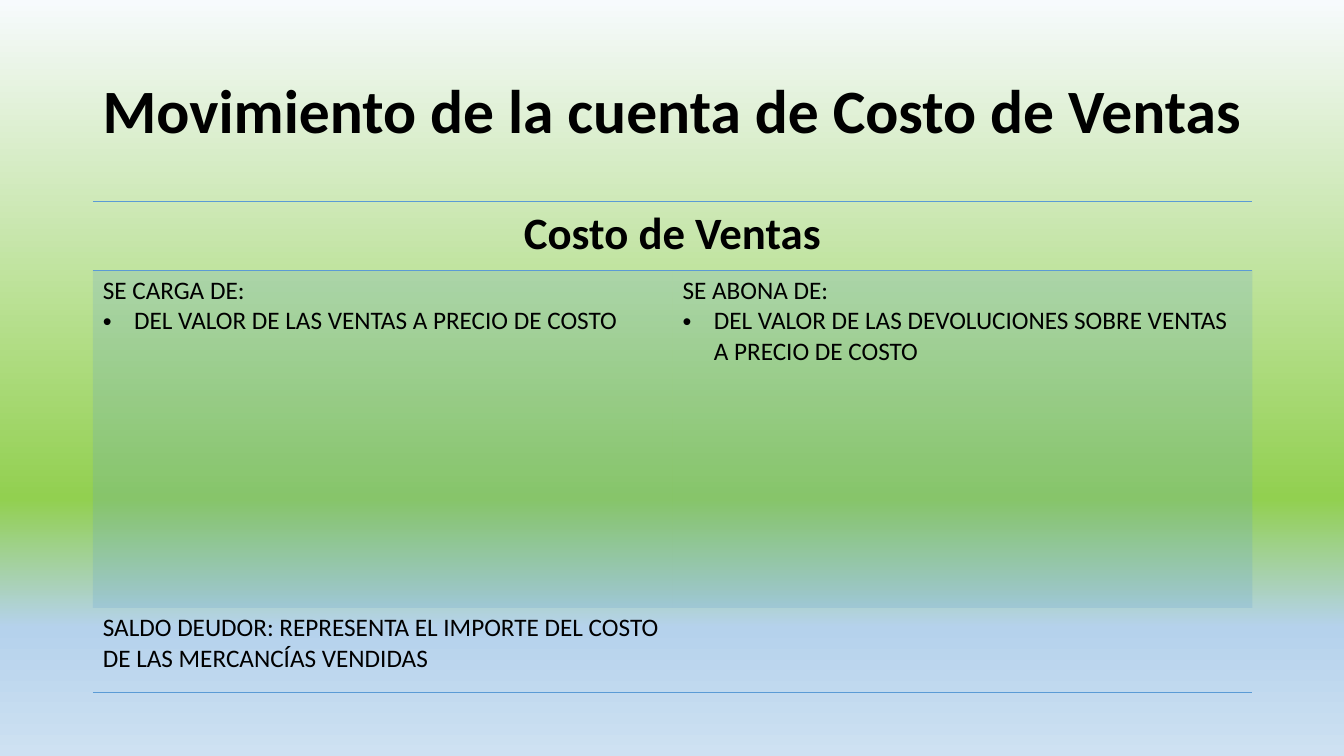
from lxml.etree import SubElement
from pptx import Presentation
from pptx.dml.color import RGBColor
from pptx.enum.text import MSO_ANCHOR as Anchor, PP_ALIGN as Align
from pptx.oxml import parse_xml
from pptx.oxml.ns import nsdecls, qn
from pptx.util import Inches, Pt

WIDTH, HEIGHT = 13.33, 7.5
FONT = "Calibri"
COLORS = {"text": "000000", "accent": "5B9BD5", "sky": "F7FAFD",
          "grass": "92D050", "water": "B5D2EC", "mist": "CEE1F2"}
BACKDROP = [(0, "sky"), (66, "grass"), (83, "water"), (100, "mist")]
NO_STYLE = "{2D5ABB26-0587-4C30-8999-92F81FD0307C}"
ROW_HEIGHTS = [0.68, 3.35, 0.84]
ENTRIES = [
    ["SE CARGA DE:", "DEL VALOR DE LAS VENTAS A PRECIO DE COSTO"],
    ["SE ABONA DE:", "DEL VALOR DE LAS DEVOLUCIONES SOBRE VENTAS A PRECIO DE COSTO"],
]
BALANCE = "SALDO DEUDOR: REPRESENTA EL IMPORTE DEL COSTO DE LAS MERCANCÍAS VENDIDAS"


def paint_background(slide):
    """Fill the slide with the vertical gradient."""
    fill = slide.background.fill
    fill.gradient()
    fill.gradient_angle = 270
    stops = slide.element.find(".//" + qn("a:gsLst"))
    for stop in list(stops):
        stops.remove(stop)
    for share, name in BACKDROP:
        stop = SubElement(stops, qn("a:gs"), pos=str(share * 1000))
        SubElement(stop, qn("a:srgbClr"), val=COLORS[name])


def write(frame, lines, size, bold=False, align=Align.LEFT):
    """Write the lines as paragraphs in one type style."""
    frame.text = "\n".join(lines)
    for paragraph in frame.paragraphs:
        paragraph.alignment = align
        for run in paragraph.runs:
            run.font.name = FONT
            run.font.size = Pt(size)
            run.font.bold = bold
            run.font.color.rgb = RGBColor.from_string(COLORS["text"])


def add_bullet(paragraph):
    """Give the paragraph a bullet with a hanging indent."""
    props = paragraph._p.get_or_add_pPr()
    indent = Inches(0.31)
    props.set("marL", str(indent))
    props.set("indent", str(-indent))
    SubElement(props, qn("a:buFont"), typeface="Arial")
    SubElement(props, qn("a:buChar"), char="•")


def rule_cell(cell, sides):
    """Draw accent rules on the named sides of a cell."""
    props = cell._tc.get_or_add_tcPr()
    for place, side in enumerate(sides):
        props.insert(place, parse_xml(
            f'<a:ln{side} {nsdecls("a")} w="{Pt(1)}"><a:solidFill>'
            f'<a:srgbClr val="{COLORS["accent"]}"/></a:solidFill></a:ln{side}>'))


def tint_cell(cell):
    """Fill a cell with the accent colour at 20% opacity."""
    cell.fill.solid()
    cell.fill.fore_color.rgb = RGBColor.from_string(COLORS["accent"])
    color = cell._tc.tcPr.find(".//" + qn("a:srgbClr"))
    SubElement(color, qn("a:alpha"), val="20000")


def add_title(slide, left, top, width, height):
    """Place the centred heading in its box."""
    heading = slide.shapes.add_textbox(*map(Inches, (left, top, width, height)))
    frame = heading.text_frame
    frame.word_wrap = True
    frame.vertical_anchor = Anchor.MIDDLE
    write(frame, ["Movimiento de la cuenta de Costo de Ventas"], 44, True, Align.CENTER)
    frame.paragraphs[0].line_spacing = 0.9


def add_account(slide, left, top, width, height):
    """Place the T-account table in its box."""
    account = slide.shapes.add_table(
        len(ROW_HEIGHTS), len(ENTRIES), *map(Inches, (left, top, width, height))).table
    account._tbl.tblPr.find(qn("a:tableStyleId")).text = NO_STYLE
    account.first_row = account.horz_banding = False
    for row, row_height in zip(account.rows, ROW_HEIGHTS):
        row.height = Inches(row_height)
    for cell in account.iter_cells():
        cell.fill.background()

    header = account.cell(0, 0)
    header.merge(account.cell(0, 1))
    write(header.text_frame, ["Costo de Ventas"], 32, True, Align.CENTER)
    for column, lines in enumerate(ENTRIES):
        entry = account.cell(1, column)
        write(entry.text_frame, lines, 18)
        add_bullet(entry.text_frame.paragraphs[1])
        tint_cell(entry)
        rule_cell(account.cell(0, column), "TB")
        rule_cell(account.cell(2, column), "B")
    write(account.cell(2, 0).text_frame, [BALANCE], 18)


def main():
    """Build and save the slide."""
    deck = Presentation()
    deck.slide_width, deck.slide_height = Inches(WIDTH), Inches(HEIGHT)
    slide = deck.slides.add_slide(deck.slide_layouts[6])
    margin = 0.92
    body_width = 11.5
    paint_background(slide)
    add_title(slide, margin, 0.4, body_width, 1.45)
    add_account(slide, margin, 2, body_width, sum(ROW_HEIGHTS))
    deck.save("out.pptx")


if __name__ == "__main__":
    main()
